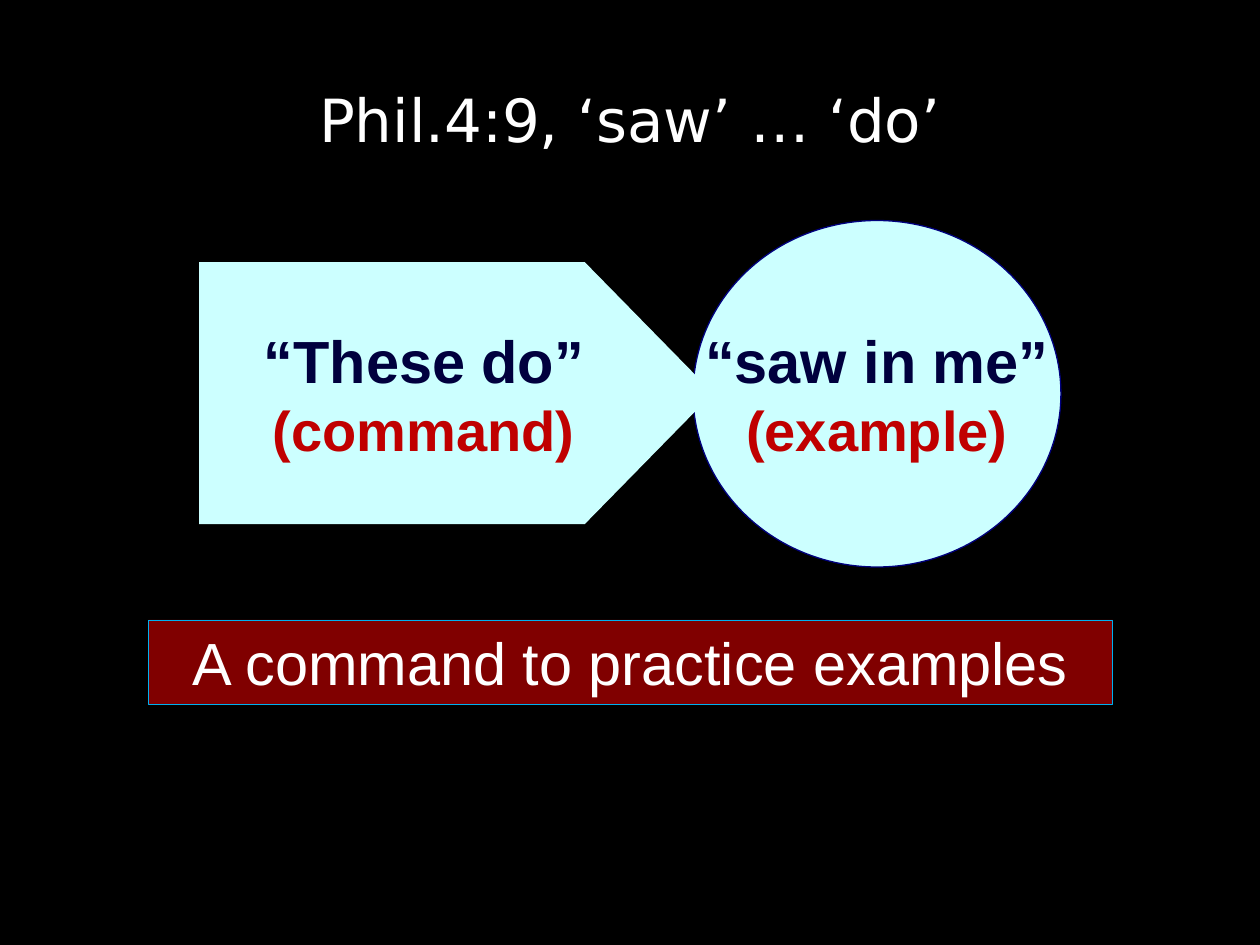
from pptx import Presentation
from pptx.dml.color import RGBColor
from pptx.enum.shapes import MSO_SHAPE
from pptx.enum.text import MSO_ANCHOR, PP_ALIGN
from pptx.util import Inches, Pt

OVAL, PENTAGON, RECTANGLE = MSO_SHAPE.OVAL, MSO_SHAPE.PENTAGON, MSO_SHAPE.RECTANGLE
MIDDLE, CENTER = MSO_ANCHOR.MIDDLE, PP_ALIGN.CENTER

COLORS = {
    "background": "000000",
    "white": "FFFFFF",
    "pale": "CCFFFF",
    "outline": "00007D",
    "quote": "00003E",
    "label": "C00000",
    "banner": "800000",
    "banner_line": "00B0F0",
}
TITLE = {"name": "DejaVu Sans", "size": Pt(34), "color": "white"}
QUOTE = {"name": "Arial", "size": Pt(34), "bold": True, "color": "quote"}
LABEL = {**QUOTE, "size": Pt(32), "color": "label"}
CONCLUSION = {**TITLE, "name": "Arial"}


class VerseSlide:
    """Holds the colours and the slide, and adds styled elements to it."""

    def __init__(self, slide, colors):
        self.slide = slide
        self.colors = colors

    def color(self, name):
        return RGBColor.from_string(self.colors[name])

    def background(self, name):
        fill = self.slide.background.fill
        fill.solid()
        fill.fore_color.rgb = self.color(name)

    def set_lines(self, frame, lines, wrap):
        frame.word_wrap = wrap
        frame.vertical_anchor = MIDDLE
        for index, (words, style) in enumerate(lines):
            paragraph = frame.add_paragraph() if index else frame.paragraphs[0]
            paragraph.alignment = CENTER
            run = paragraph.add_run()
            run.text = words
            for key, value in style.items():
                if key == "color":
                    run.font.color.rgb = self.color(value)
                else:
                    setattr(run.font, key, value)

    def text(self, bounds, lines):
        box = self.slide.shapes.add_textbox(*map(Inches, bounds))
        self.set_lines(box.text_frame, lines, True)

    def shape(self, kind, bounds, fill, lines, outline=None, width=0.75, wrap=False):
        shape = self.slide.shapes.add_shape(kind, *map(Inches, bounds))
        shape.shadow.inherit = False
        shape.fill.solid()
        shape.fill.fore_color.rgb = self.color(fill)
        if outline:
            shape.line.color.rgb = self.color(outline)
            shape.line.width = Pt(width)
        else:
            shape.line.fill.background()
        self.set_lines(shape.text_frame, lines, wrap)
        return shape


def main():
    deck = Presentation()
    deck.slide_width, deck.slide_height = Inches(10), Inches(7.5)
    verse = VerseSlide(deck.slides.add_slide(deck.slide_layouts[6]), COLORS)
    verse.background("background")
    verse.text((0.5, 0.3, 9, 1.28), [("Phil.4:9, ‘saw’ … ‘do’", TITLE)])
    verse.shape(OVAL, (5.5, 1.75, 2.92, 2.75), "pale",
                [("“saw in me”", QUOTE), ("(example)", LABEL)], "outline")
    command = verse.shape(PENTAGON, (1.58, 2.08, 4.08, 2.08), "pale",
                          [("“These do”", QUOTE), ("(command)", LABEL)])
    command.adjustments[0] = 0.49
    verse.shape(RECTANGLE, (1.18, 4.92, 7.65, 0.67), "banner",
                [("A command to practice examples", CONCLUSION)],
                "banner_line", 0.25, True)
    deck.save("out.pptx")


if __name__ == "__main__":
    main()
